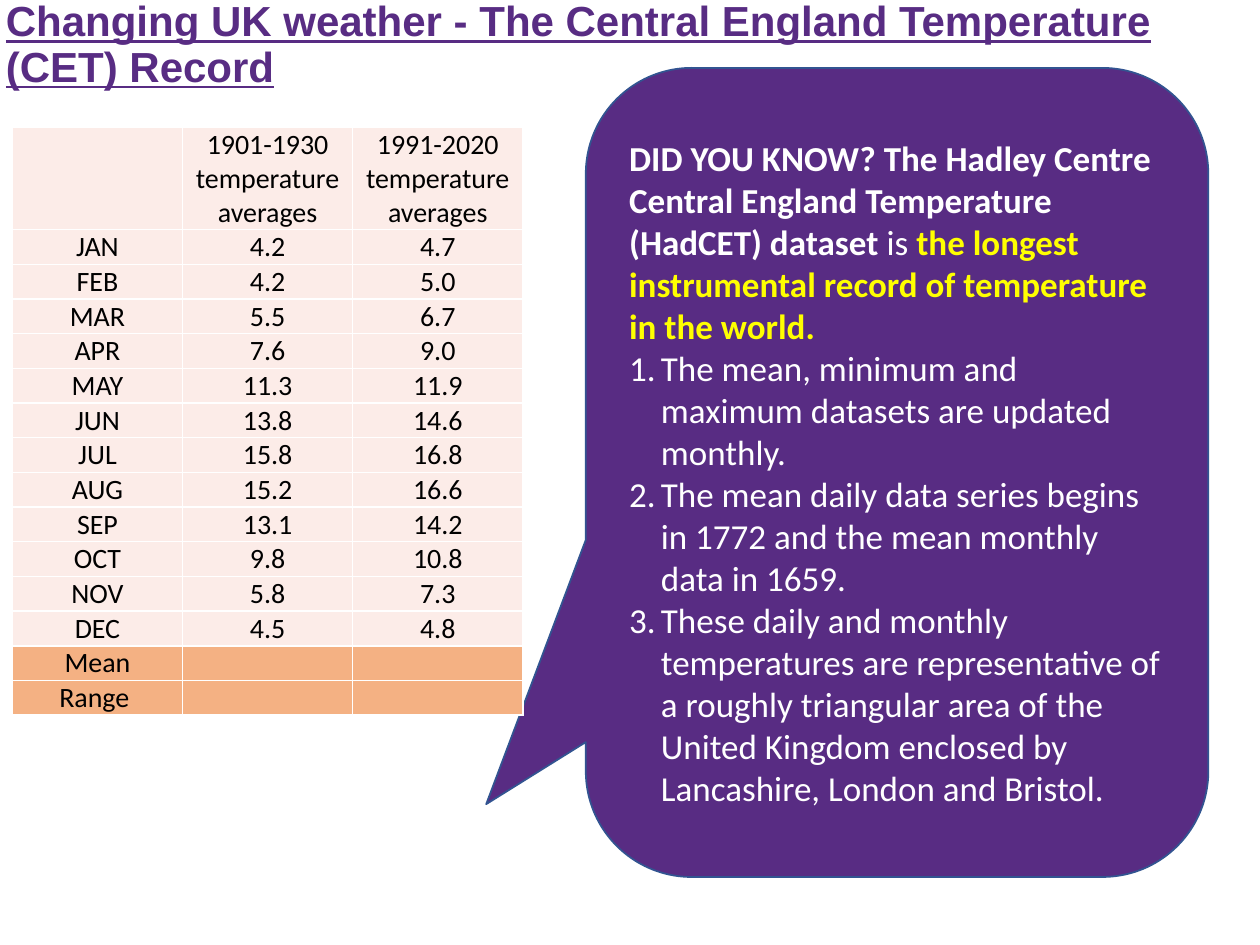
import dataclasses
import typing

import lxml.etree
import pptx
import pptx.dml.color
import pptx.enum.shapes
import pptx.enum.text
import pptx.oxml.ns
import pptx.util
from pptx.util import Cm

qualified = pptx.oxml.ns.qn


@dataclasses.dataclass(frozen=True)
class Theme:
    purple: str = "582C83"
    outline: str = "325491"
    white: str = "FFFFFF"
    black: str = "000000"
    yellow: str = "FFFF00"
    month_fill: str = "FCECE8"
    summary_fill: str = "F4B183"
    title_font: str = "Arial"
    body_font: str = "Calibri"
    title_size: int = 24
    callout_size: int = 20
    table_size: int = 16


@dataclasses.dataclass(frozen=True)
class Span:
    text: str
    color: str
    bold: bool = False


@dataclasses.dataclass(frozen=True)
class TableRow:
    cells: tuple[str, str, str]
    fill: str
    height: float = 0.7


THEME = Theme()
TITLE = "Changing UK weather - The Central England Temperature (CET) Record"
INTRODUCTION = (
    Span("DID YOU KNOW? The Hadley Centre Central England Temperature (HadCET) dataset ", THEME.white, True),
    Span("is ", THEME.white),
    Span("the longest instrumental record of temperature in the world.", THEME.yellow, True),
)
FACTS = (
    "The mean, minimum and maximum datasets are updated monthly.",
    "The mean daily data series begins in 1772 and the mean monthly data in 1659.",
    "These daily and monthly temperatures are representative of a roughly triangular area "
    "of the United Kingdom enclosed by Lancashire, London and Bristol.",
)
MONTHS = (
    ("JAN", "4.2", "4.7"),
    ("FEB", "4.2", "5.0"),
    ("MAR", "5.5", "6.7"),
    ("APR", "7.6", "9.0"),
    ("MAY", "11.3", "11.9"),
    ("JUN", "13.8", "14.6"),
    ("JUL", "15.8", "16.8"),
    ("AUG", "15.2", "16.6"),
    ("SEP", "13.1", "14.2"),
    ("OCT", "9.8", "10.8"),
    ("NOV", "5.8", "7.3"),
    ("DEC", "4.5", "4.8"),
)
ROWS = (
    TableRow(("", "1901-1930 temperature averages", "1991-2020 temperature averages"), THEME.month_fill, 2.06),
    *(TableRow(month, THEME.month_fill) for month in MONTHS),
    *(TableRow((label, "", ""), THEME.summary_fill) for label in ("Mean", "Range ")),
)


def rgb(color: str) -> pptx.dml.color.RGBColor:
    return pptx.dml.color.RGBColor.from_string(color)


def set_attributes(target: typing.Any, values: dict[str, typing.Any]) -> None:
    for name, value in values.items():
        setattr(target, name, value)


def add_span(paragraph: typing.Any, span: Span, font: str, size: int, underline: bool = False) -> None:
    run = paragraph.add_run()
    run.text = span.text
    set_attributes(run.font, {
        "name": font, "size": pptx.util.Pt(size), "bold": span.bold, "underline": underline,
    })
    run.font.color.rgb = rgb(span.color)


def add_title(slide: typing.Any) -> None:
    title = slide.shapes.add_textbox(Cm(-0.13), Cm(0), Cm(23.77), Cm(1.85))
    set_attributes(title.text_frame, {
        "word_wrap": True, "vertical_anchor": pptx.enum.text.MSO_ANCHOR.MIDDLE,
    })
    paragraph = title.text_frame.paragraphs[0]
    paragraph.line_spacing = 0.9
    add_span(paragraph, Span(TITLE, THEME.purple, True), THEME.title_font, THEME.title_size, True)


def number_paragraph(paragraph: typing.Any) -> None:
    """Give the paragraph an automatic number and a hanging indent."""
    properties = paragraph._p.get_or_add_pPr()
    properties.set("marL", str(Cm(0.64)))
    properties.set("indent", str(Cm(-0.64)))
    lxml.etree.SubElement(properties, qualified("a:buFont"), typeface="+mj-lt")
    lxml.etree.SubElement(properties, qualified("a:buAutoNum"), type="arabicPeriod")


def add_callout(slide: typing.Any) -> None:
    callout = slide.shapes.add_shape(
        pptx.enum.shapes.MSO_SHAPE.ROUNDED_RECTANGULAR_CALLOUT,
        Cm(11.81), Cm(1.37), Cm(12.55), Cm(16.31),
    )
    for index, adjustment in enumerate((-0.66, 0.41, 0.17)):
        callout.adjustments[index] = adjustment
    callout.shadow.inherit = False
    callout.fill.solid()
    callout.fill.fore_color.rgb = rgb(THEME.purple)
    callout.line.color.rgb = rgb(THEME.outline)
    callout.line.width = pptx.util.Pt(1)
    frame = callout.text_frame
    set_attributes(frame, {
        "word_wrap": True, "vertical_anchor": pptx.enum.text.MSO_ANCHOR.MIDDLE,
    })
    paragraph = frame.paragraphs[0]
    paragraph.alignment = pptx.enum.text.PP_ALIGN.LEFT
    for span in INTRODUCTION:
        add_span(paragraph, span, THEME.body_font, THEME.callout_size)
    for fact in FACTS:
        paragraph = frame.add_paragraph()
        paragraph.alignment = pptx.enum.text.PP_ALIGN.LEFT
        number_paragraph(paragraph)
        add_span(paragraph, Span(fact, THEME.white), THEME.body_font, THEME.callout_size)


def add_borders(cell: typing.Any) -> None:
    properties = cell._tc.get_or_add_tcPr()
    for side in ("lnL", "lnR", "lnT", "lnB"):
        border = lxml.etree.SubElement(properties, qualified(f"a:{side}"), w=str(pptx.util.Pt(1)))
        fill = lxml.etree.SubElement(border, qualified("a:solidFill"))
        lxml.etree.SubElement(fill, qualified("a:srgbClr"), val=THEME.white)


def fill_cell(cell: typing.Any, text: str, fill: str) -> None:
    set_attributes(cell, {
        "margin_left": 0, "margin_right": 0, "margin_top": 0, "margin_bottom": 0,
        "vertical_anchor": pptx.enum.text.MSO_ANCHOR.BOTTOM,
    })
    add_borders(cell)
    cell.fill.solid()
    cell.fill.fore_color.rgb = rgb(fill)
    paragraph = cell.text_frame.paragraphs[0]
    paragraph.alignment = pptx.enum.text.PP_ALIGN.CENTER
    if text:
        add_span(paragraph, Span(text, THEME.black), THEME.body_font, THEME.table_size)
    else:
        # An empty cell still takes its line height from its type size.
        lxml.etree.SubElement(paragraph._p, qualified("a:endParaRPr"), sz=str(THEME.table_size * 100))


def add_temperature_table(slide: typing.Any) -> None:
    column_count = len(ROWS[0].cells)
    column_width = Cm(3.43)
    height = Cm(sum(row.height for row in ROWS))
    table = slide.shapes.add_table(
        len(ROWS), column_count, Cm(0.25), Cm(2.57), column_width * column_count, height,
    ).table
    set_attributes(table, {"first_row": False, "horz_banding": False})
    for column in table.columns:
        column.width = column_width
    for row_index, row in enumerate(ROWS):
        table.rows[row_index].height = Cm(row.height)
        for column_index, text in enumerate(row.cells):
            fill_cell(table.cell(row_index, column_index), text, row.fill)


def main() -> None:
    presentation = pptx.Presentation()
    set_attributes(presentation, {"slide_width": Cm(25.4), "slide_height": Cm(19.05)})
    slide = presentation.slides.add_slide(presentation.slide_layouts[6])
    add_title(slide)
    add_callout(slide)
    add_temperature_table(slide)
    presentation.save("out.pptx")


if __name__ == "__main__":
    main()
